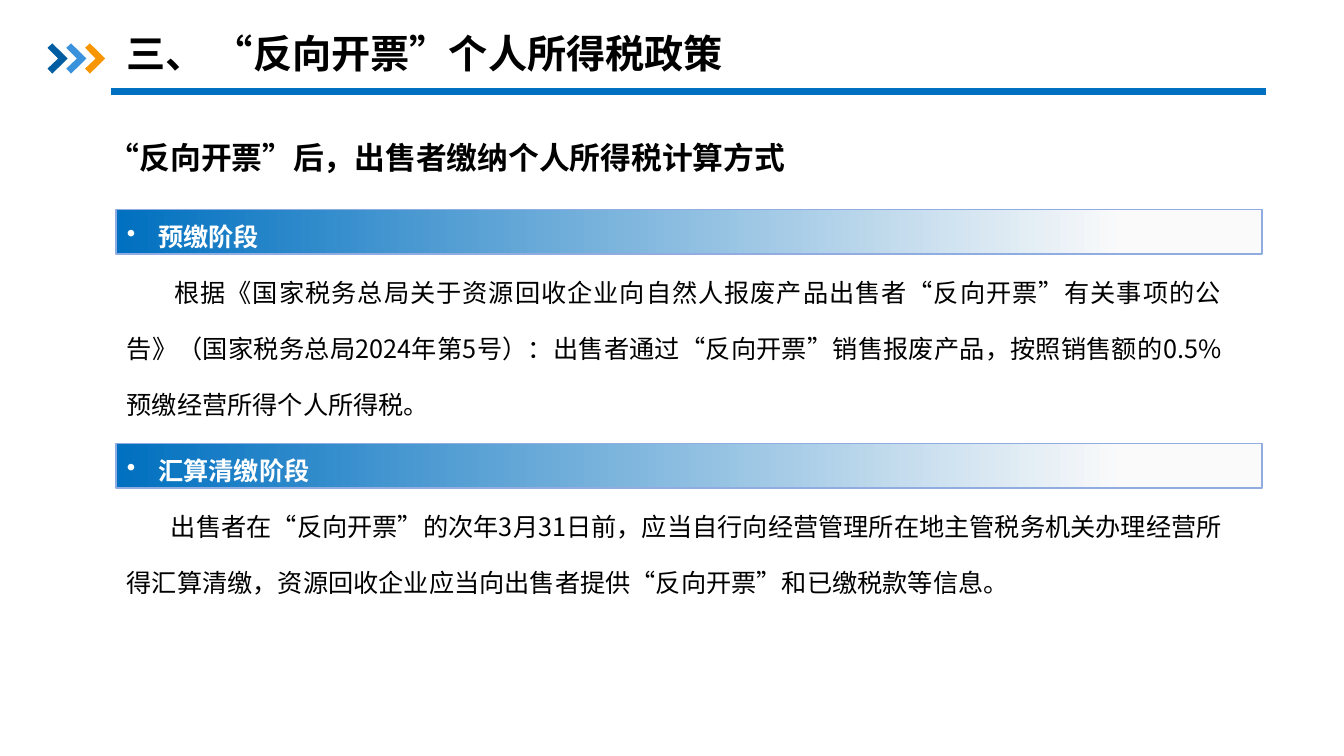
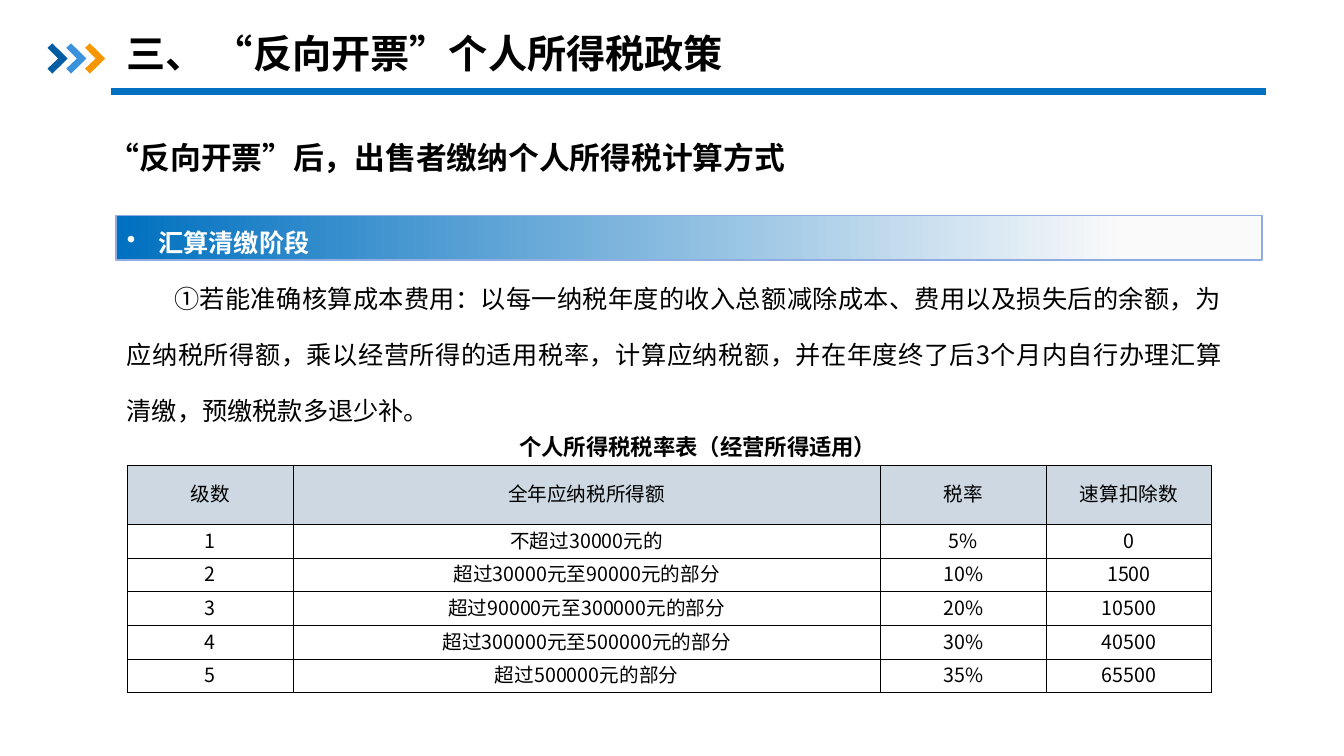
from collections import namedtuple

from lxml import etree
from pptx import Presentation
from pptx.dml.color import RGBColor
from pptx.enum.lang import MSO_LANGUAGE_ID
from pptx.enum.shapes import MSO_CONNECTOR, MSO_SHAPE
from pptx.enum.text import MSO_ANCHOR, PP_ALIGN
from pptx.oxml.ns import qn
from pptx.util import Pt

LEFT, CENTER, JUSTIFY = PP_ALIGN.LEFT, PP_ALIGN.CENTER, PP_ALIGN.JUSTIFY
MIDDLE = MSO_ANCHOR.MIDDLE
STRAIGHT = MSO_CONNECTOR.STRAIGHT
RECTANGLE = MSO_SHAPE.RECTANGLE
CHINESE = MSO_LANGUAGE_ID.SIMPLIFIED_CHINESE

COLORS = {
    "text": "000000",
    "white": "FFFFFF",
    "rule": "0070C0",
    "bar_dark": "0070C0",
    "bar_light": "FAFAFA",
    "bar_line": "91ACE0",
    "chevron_dark": "005DA2",
    "chevron_light": "3992DB",
    "chevron_orange": "F79600",
    "table_head": "CDD8E2",
}
FONT = "Noto Sans CJK SC"
STYLES = {
    "title": {"size": Pt(28), "bold": True},
    "subtitle": {"size": Pt(22), "bold": True},
    "stage": {"size": Pt(18), "bold": True},
    "body": {"size": Pt(18), "bold": False},
    "caption": {"size": Pt(16), "bold": True},
    "cell": {"size": Pt(14), "bold": False},
}
LINE_SPACING = Pt(40)

Box = namedtuple("Box", "left top width height")
HEADER = Box(34, 31, 870, 34.5)
SUBTITLE = Box(70.6, 82, 796, 47.5)
CHEVRON = [(0, 3.2), (3.4, 0), (14.4, 10.8), (3.4, 21.6), (0, 18), (7.6, 10.8)]
CHEVRON_PITCH = 13.4
CHEVRON_COLORS = ["chevron_dark", "chevron_light", "chevron_orange"]

TITLE_TEXT = "三、 “反向开票”个人所得税政策"
SUBTITLE_TEXT = "“反向开票”后，出售者缴纳个人所得税计算方式"
RATE_CAPTION = "个人所得税税率表（经营所得适用）"
RATE_ROWS = [
    ("级数", "全年应纳税所得额", "税率", "速算扣除数"),
    ("1", "不超过30000元的", "5%", "0"),
    ("2", "超过30000元至90000元的部分", "10%", "1500"),
    ("3", "超过90000元至300000元的部分", "20%", "10500"),
    ("4", "超过300000元至500000元的部分", "30%", "40500"),
    ("5", "超过500000元的部分", "35%", "65500"),
]
COLUMN_WIDTHS = [118.6, 419.4, 118.6, 118.2]
HEAD_HEIGHT, ROW_HEIGHT = 42, 24.1
CELL_FORMAT = {
    "vertical_anchor": MIDDLE,
    "margin_left": Pt(0.75),
    "margin_right": Pt(0.75),
    "margin_top": Pt(0.75),
    "margin_bottom": Pt(3.6),
}


def rgb(name):
    return RGBColor.from_string(COLORS[name])


def points(box):
    return [Pt(value) for value in box]


def set_attributes(target, values):
    for name, value in values.items():
        setattr(target, name, value)


def write(paragraph, text, style, color="text", align=LEFT, spacing=None):
    set_attributes(paragraph, {"alignment": align, "line_spacing": spacing})
    run = paragraph.add_run()
    run.text = text
    set_attributes(run.font, {"name": FONT, "language_id": CHINESE, **STYLES[style]})
    run.font.color.rgb = rgb(color)
    properties = run.font._element
    etree.SubElement(properties, qn("a:ea")).set("typeface", FONT)


def indent(paragraph, first_line, left=0, bullet=None):
    properties = paragraph._p.get_or_add_pPr()
    properties.set("marL", str(Pt(left)))
    properties.set("indent", str(Pt(first_line)))
    if bullet:
        etree.SubElement(properties, qn("a:buChar")).set("char", bullet)


def add_text_frame(slide, box):
    text_frame = slide.shapes.add_textbox(*points(box)).text_frame
    text_frame.word_wrap = True
    return text_frame


def add_label(slide, box, text, style, **layout):
    write(add_text_frame(slide, box).paragraphs[0], text, style, **layout)


def add_chevron(slide, left, top, color):
    corners = [(Pt(left + x), Pt(top + y)) for x, y in CHEVRON]
    builder = slide.shapes.build_freeform(*corners[0])
    builder.add_line_segments(corners[1:], close=True)
    shape = builder.convert_to_shape()
    shape.shadow.inherit = False
    shape.fill.solid()
    shape.fill.fore_color.rgb = rgb(color)
    shape.line.fill.background()


def add_header(slide, box):
    for index, color in enumerate(CHEVRON_COLORS):
        add_chevron(slide, box.left + index * CHEVRON_PITCH, box.top, color)
    bottom = Pt(box.top + box.height)
    rule = slide.shapes.add_connector(
        STRAIGHT, Pt(box.left + 45.2), bottom, Pt(box.left + box.width), bottom
    )
    rule.line.width = Pt(5)
    rule.line.color.rgb = rgb("rule")
    etree.SubElement(rule._element.spPr, qn("a:effectLst"))
    title_box = Box(box.left + 49.5, box.top - 13.7, 480, 75)
    add_label(slide, title_box, TITLE_TEXT, "title")


def add_stage_bar(slide, box):
    bar = slide.shapes.add_shape(RECTANGLE, *points(box))
    bar.shadow.inherit = False
    bar.fill.gradient()
    bar.fill.gradient_angle = 180
    stops = [(0.12, "bar_light"), (1, "bar_dark")]
    for stop, (position, color) in zip(bar.fill.gradient_stops, stops):
        stop.position = position
        stop.color.rgb = rgb(color)
    bar.line.width = Pt(1)
    bar.line.color.rgb = rgb("bar_line")


def add_stage(slide, box, name, text, first_line, line_count):
    add_stage_bar(slide, box)
    text_height = (line_count + 1) * 40 + 8
    text_box = Box(box.left + 0.7, box.top - 13.8, 796.3, text_height)
    text_frame = add_text_frame(slide, text_box)
    heading = text_frame.paragraphs[0]
    write(heading, name, "stage", "white", JUSTIFY, LINE_SPACING)
    indent(heading, -22.5, 22.5, "•")
    body = text_frame.add_paragraph()
    write(body, text, "body", "text", JUSTIFY, LINE_SPACING)
    indent(body, first_line)


def add_cell_borders(cell):
    properties = cell._tc.get_or_add_tcPr()
    for side in ("lnL", "lnR", "lnT", "lnB"):
        line = etree.SubElement(properties, qn(f"a:{side}"), w=str(Pt(0.5)))
        fill = etree.SubElement(line, qn("a:solidFill"))
        etree.SubElement(fill, qn("a:srgbClr"), val=COLORS["text"])


def add_rate_table(slide, box):
    caption_box = Box(box.left + 248.3, box.top - 26.6, 319, 26.6)
    add_label(slide, caption_box, RATE_CAPTION, "caption", align=CENTER)
    frame = slide.shapes.add_table(len(RATE_ROWS), len(COLUMN_WIDTHS), *points(box))
    table = frame.table
    set_attributes(table, {"first_row": False, "horz_banding": False})
    for column, width in zip(table.columns, COLUMN_WIDTHS):
        column.width = Pt(width)
    for row_index, (row, texts) in enumerate(zip(table.rows, RATE_ROWS)):
        row.height = Pt(ROW_HEIGHT if row_index else HEAD_HEIGHT)
        for cell, text in zip(row.cells, texts):
            set_attributes(cell, CELL_FORMAT)
            add_cell_borders(cell)
            cell.fill.solid()
            cell.fill.fore_color.rgb = rgb("white" if row_index else "table_head")
            write(cell.text_frame.paragraphs[0], text, "cell", align=CENTER)


def add_policy_slide(presentation):
    slide = presentation.slides.add_slide(presentation.slide_layouts[6])
    add_header(slide, HEADER)
    add_label(slide, SUBTITLE, SUBTITLE_TEXT, "subtitle", spacing=LINE_SPACING)
    return slide


def stage_box(top):
    return Box(82.8, top, 818.6, 31.7)


def build_stages_slide(presentation):
    slide = add_policy_slide(presentation)
    add_stage(
        slide, stage_box(149.8), "预缴阶段",
        "根据《国家税务总局关于资源回收企业向自然人报废产品出售者“反向开票”有关事项的公告》"
        "（国家税务总局2024年第5号）：出售者通过“反向开票”销售报废产品，"
        "按照销售额的0.5%预缴经营所得个人所得税。",
        34, 3,
    )
    add_stage(
        slide, stage_box(316.9), "汇算清缴阶段",
        "出售者在“反向开票”的次年3月31日前，应当自行向经营管理所在地主管税务机关办理"
        "经营所得汇算清缴，资源回收企业应当向出售者提供“反向开票”和已缴税款等信息。",
        31.5, 2,
    )


def build_rates_slide(presentation):
    slide = add_policy_slide(presentation)
    add_stage(
        slide, stage_box(154), "汇算清缴阶段",
        "①若能准确核算成本费用：以每一纳税年度的收入总额减除成本、费用以及损失后的余额，"
        "为应纳税所得额，乘以经营所得的适用税率，计算应纳税额，"
        "并在年度终了后3个月内自行办理汇算清缴，预缴税款多退少补。",
        34, 3,
    )
    table_height = HEAD_HEIGHT + ROW_HEIGHT * (len(RATE_ROWS) - 1)
    add_rate_table(slide, Box(90.8, 332.4, sum(COLUMN_WIDTHS), table_height))


def main():
    presentation = Presentation()
    set_attributes(presentation, {"slide_width": Pt(960), "slide_height": Pt(540)})
    build_stages_slide(presentation)
    build_rates_slide(presentation)
    presentation.save("out.pptx")


if __name__ == "__main__":
    main()
